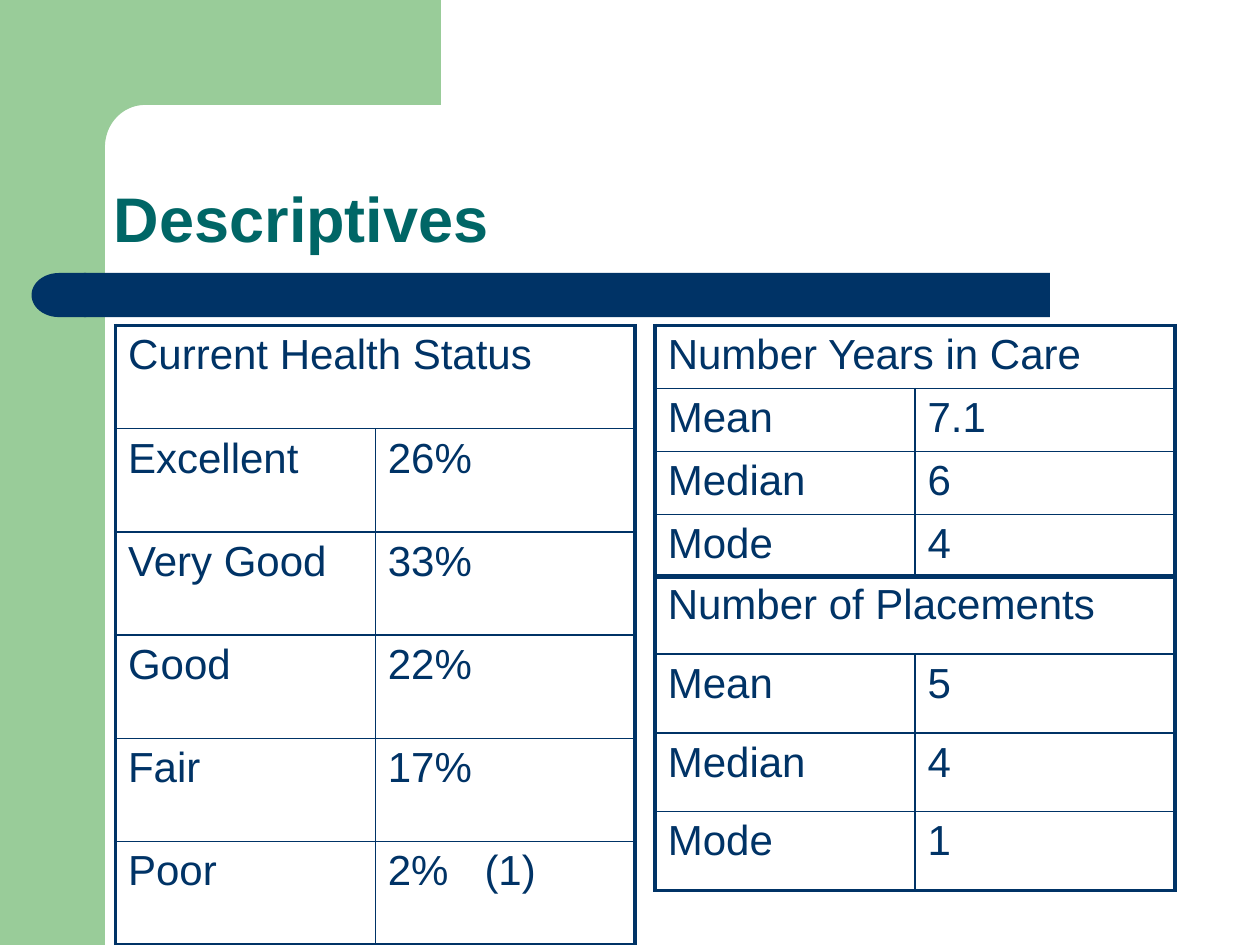
from dataclasses import dataclass
from math import cos, pi, sin

from lxml.etree import SubElement
from pptx import Presentation
from pptx.dml.color import RGBColor
from pptx.enum.shapes import MSO_SHAPE
from pptx.enum.text import MSO_ANCHOR
from pptx.oxml.ns import qn
from pptx.slide import Slide
from pptx.table import _Cell
from pptx.text.text import _Paragraph
from pptx.util import Emu, Inches, Pt


@dataclass(frozen=True)
class Theme:
    green: str = "99CC99"
    navy: str = "003366"
    teal: str = "006666"
    font: str = "Arial"
    title_size: float = 36
    body_size: float = 24
    outer_line: float = 2.25
    inner_line: float = 1


@dataclass(frozen=True)
class Box:
    column: float
    row: float
    columns: float
    rows: float

    def lengths(self) -> tuple[Emu, ...]:
        return tuple(grid(n) for n in (self.column, self.row, self.columns, self.rows))


@dataclass(frozen=True)
class Band:
    preset: MSO_SHAPE
    box: Box
    color: str
    rotation: float = 0


@dataclass(frozen=True)
class StatTable:
    heading: str
    entries: tuple[tuple[str, str], ...]
    box: Box


THEME = Theme()
GRID_COLUMNS, GRID_ROWS = 120, 90
CELLS_PER_INCH = 12
TAB_STOP = 9.2

SIDE_BAND = Band(MSO_SHAPE.RECTANGLE, Box(0, 0, 10, GRID_ROWS), THEME.green)
RULE = (
    Band(MSO_SHAPE.RECTANGLE, Box(8, 26, 92, 4.2), THEME.navy),
    Band(MSO_SHAPE.FLOWCHART_DELAY, Box(3, 26, 5.2, 4.2), THEME.navy, 180),
)
TITLE_BOX = Box(10, 10, 104, 15)
STAT_TABLES = (
    StatTable(
        "Current Health Status",
        (("Excellent", "26%"), ("Very Good", "33%"), ("Good", "22%"),
         ("Fair", "17%"), ("Poor", "2%\t(1)")),
        Box(11, 31, 49.5, 59),
    ),
    StatTable(
        "Number Years in Care",
        (("Mean", "7.1"), ("Median", "6"), ("Mode", "4")),
        Box(62.4, 31, 49.5, 22.7),
    ),
    StatTable(
        "Number of Placements",
        (("Mean", "5"), ("Median", "4"), ("Mode", "1")),
        Box(62.4, 54.8, 49.5, 30),
    ),
)


def grid(cells: float) -> Emu:
    return Inches(cells / CELLS_PER_INCH)


def write(paragraph: _Paragraph, text: str, size: float, color: str, bold: bool = False) -> None:
    run = paragraph.add_run()
    run.text = text
    formats = {"name": THEME.font, "size": Pt(size), "bold": bold}
    for attribute, value in formats.items():
        setattr(run.font, attribute, value)
    run.font.color.rgb = RGBColor.from_string(color)


def paint(shape, color: str) -> None:
    shape.shadow.inherit = False
    shape.fill.solid()
    shape.fill.fore_color.rgb = RGBColor.from_string(color)
    shape.line.fill.background()


def draw_band(slide: Slide, band: Band) -> None:
    shape = slide.shapes.add_shape(band.preset, *band.box.lengths())
    shape.rotation = band.rotation
    paint(shape, band.color)


def draw_corner(slide: Slide) -> None:
    center_x, center_y, radius_x, radius_y, steps = 13.8, 14, 3.8, 4, 24
    angles = [pi / 2 * step / steps for step in range(steps + 1)]
    arc = [(center_x - radius_x * sin(a), center_y - radius_y * cos(a)) for a in angles]
    outline = [(42, 0), (42, 10), *arc, (10, 15.4), (6, 15.4), (6, 0)]
    points = [(grid(x), grid(y)) for x, y in outline]
    builder = slide.shapes.build_freeform(*points[0])
    builder.add_line_segments(points[1:], close=True)
    paint(builder.convert_to_shape(), THEME.green)


def draw_title(slide: Slide, text: str) -> None:
    frame = slide.shapes.add_textbox(*TITLE_BOX.lengths()).text_frame
    formats = {"word_wrap": True, "vertical_anchor": MSO_ANCHOR.BOTTOM, "margin_left": grid(0.85)}
    for attribute, value in formats.items():
        setattr(frame, attribute, value)
    heading = frame.paragraphs[0]
    heading.line_spacing = 0.9
    write(heading, text, THEME.title_size, THEME.teal, bold=True)


def set_borders(cell: _Cell, outer_edges: dict[str, bool]) -> None:
    properties = cell._tc.get_or_add_tcPr()
    for edge, is_outer in outer_edges.items():
        width = THEME.outer_line if is_outer else THEME.inner_line
        line = SubElement(properties, qn(f"a:{edge}"), w=str(Pt(width)))
        fill = SubElement(line, qn("a:solidFill"))
        SubElement(fill, qn("a:srgbClr"), val=THEME.navy)


def add_tab_stop(paragraph: _Paragraph) -> None:
    stops = SubElement(paragraph._p.get_or_add_pPr(), qn("a:tabLst"))
    SubElement(stops, qn("a:tab"), pos=str(grid(TAB_STOP)), algn="l")


def draw_stat_table(slide: Slide, stats: StatTable) -> None:
    contents = ((stats.heading, ""), *stats.entries)
    last = len(contents) - 1
    table = slide.shapes.add_table(len(contents), 2, *stats.box.lengths()).table
    for flag in ("first_row", "horz_banding"):
        setattr(table, flag, False)
    table.cell(0, 0).merge(table.cell(0, 1))
    for row, texts in enumerate(contents):
        for column, text in enumerate(texts):
            cell = table.cell(row, column)
            set_borders(cell, {
                "lnL": column == 0,
                "lnR": column == 1 or row == 0,
                "lnT": row == 0,
                "lnB": row == last,
            })
            cell.fill.background()
            if text:
                paragraph = cell.text_frame.paragraphs[0]
                if "\t" in text:
                    add_tab_stop(paragraph)
                write(paragraph, text, THEME.body_size, THEME.navy)


def main() -> None:
    deck = Presentation()
    deck.slide_width, deck.slide_height = grid(GRID_COLUMNS), grid(GRID_ROWS)
    slide = deck.slides.add_slide(deck.slide_layouts[6])
    draw_band(slide, SIDE_BAND)
    draw_corner(slide)
    for band in RULE:
        draw_band(slide, band)
    draw_title(slide, "Descriptives")
    for stats in STAT_TABLES:
        draw_stat_table(slide, stats)
    deck.save("out.pptx")


if __name__ == "__main__":
    main()
